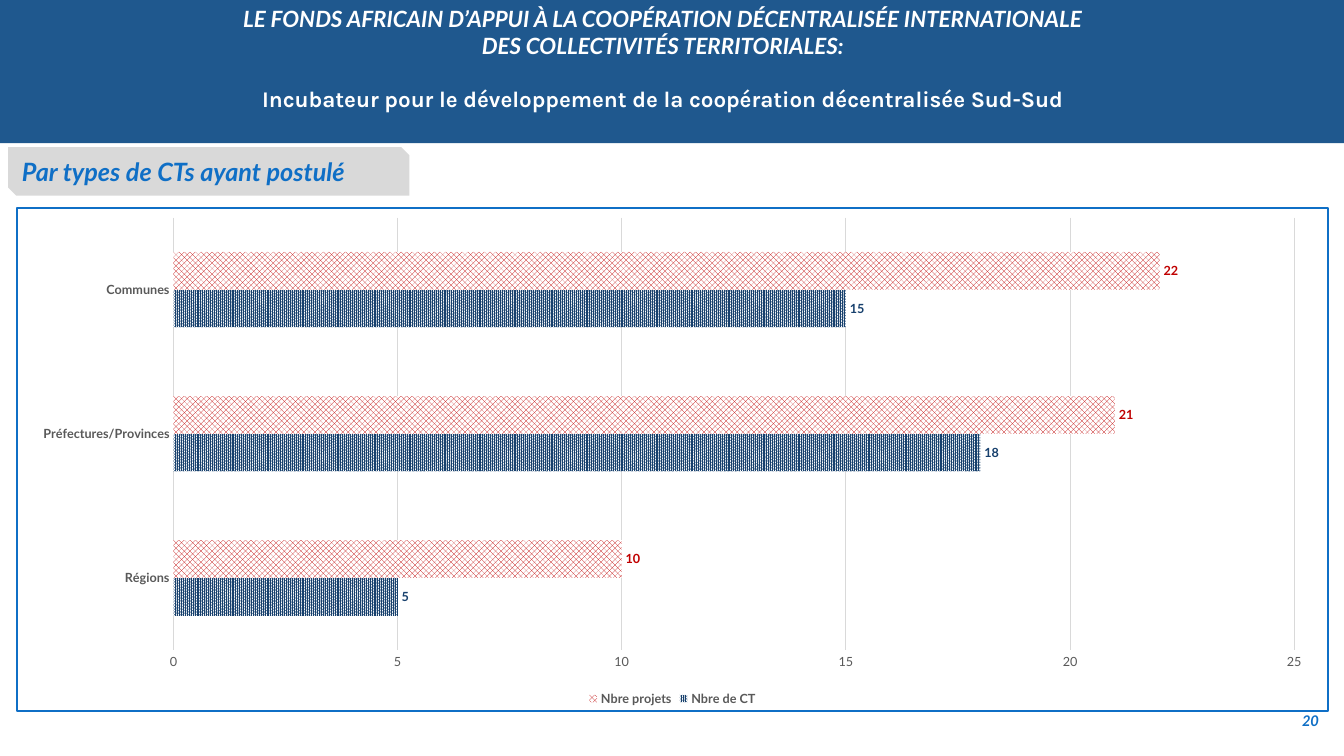
from lxml import etree
from pptx import Presentation
from pptx.chart.data import CategoryChartData
from pptx.dml.color import RGBColor
from pptx.enum.chart import XL_CHART_TYPE, XL_LABEL_POSITION, XL_LEGEND_POSITION, XL_TICK_MARK
from pptx.enum.dml import MSO_PATTERN
from pptx.enum.shapes import MSO_SHAPE
from pptx.enum.text import MSO_ANCHOR, PP_ALIGN
from pptx.oxml import parse_xml
from pptx.oxml.ns import nsdecls, qn
from pptx.util import Inches, Pt

COLORS = {"banner": "1F588E", "accent": "0F6FC6", "tag": "D9D9D9", "grid": "D9D9D9",
          "white": "FFFFFF", "axis": "595959", "navy": "17406D", "red": "C00000"}


class SlideBuilder:
    """Holds the style and the current slide, and adds elements to it."""

    def __init__(self, prs, colors):
        self.colors = colors
        self.s = prs.slides.add_slide(prs.slide_layouts[6])

    def rgb(self, name):
        return RGBColor.from_string(self.colors[name])

    def font(self, font, size, color, **extra):
        values = {"name": "Lato", "size": Pt(size), "bold": True, "italic": False, **extra}
        for key, value in values.items():
            setattr(font, key, value)
        font.color.rgb = self.rgb(color)

    def shape(self, kind, box, fill):
        sp = self.s.shapes.add_shape(kind, *map(Inches, box))
        sp.shadow.inherit = False
        sp.fill.solid()
        sp.fill.fore_color.rgb = self.rgb(fill)
        sp.line.fill.background()
        return sp

    def textbox(self, box):
        return self.s.shapes.add_textbox(*map(Inches, box))

    def text(self, sp, lines, size, color, align, **frame):
        tf = sp.text_frame
        for key, value in {"word_wrap": True, "vertical_anchor": MSO_ANCHOR.MIDDLE, **frame}.items():
            setattr(tf, key, value)
        for i, (line, before, look) in enumerate(lines):
            p = tf.add_paragraph() if i else tf.paragraphs[0]
            p.alignment = align
            p.space_before = Pt(before)
            r = p.add_run()
            r.text = line
            self.font(r.font, size, color, **look)

    def axis(self, axis, bold):
        axis.major_tick_mark = axis.minor_tick_mark = XL_TICK_MARK.NONE
        self.font(axis.tick_labels.font, 9, "axis", bold=bold)

    def line(self, line, color):
        line.color.rgb = self.rgb(color)
        line.width = Pt(0.75)

    def bar_chart(self, box, categories, series):
        data = CategoryChartData()
        data.categories = categories
        for name, values, _, _ in series:
            data.add_series(name, values)
        chart = self.s.shapes.add_chart(XL_CHART_TYPE.BAR_CLUSTERED, *map(Inches, box), data).chart
        chart.font.name, chart.font.size = "Lato", Pt(10)
        chart.has_title = False
        chart.has_legend = True
        chart.legend.position = XL_LEGEND_POSITION.BOTTOM
        chart.legend.include_in_layout = False
        self.font(chart.legend.font, 9, "axis")

        self.axis(chart.category_axis, True)
        self.line(chart.category_axis.format.line, "grid")
        value_axis = chart.value_axis
        self.axis(value_axis, False)
        for key, value in {"minimum_scale": 0, "maximum_scale": 25, "major_unit": 5}.items():
            setattr(value_axis, key, value)
        value_axis.format.line.fill.background()
        self.line(value_axis.major_gridlines.format.line, "grid")

        plot = chart.plots[0]
        for key, value in {"gap_width": 182, "overlap": 0, "vary_by_categories": False}.items():
            setattr(plot, key, value)
        for ser, (_, _, pattern, color) in zip(plot.series, series):
            fill = ser.format.fill
            fill.patterned()
            fill.pattern = pattern
            fill.fore_color.rgb = self.rgb(color)
            fill.back_color.rgb = self.rgb("white")
            labels = ser.data_labels
            labels.show_value = True
            labels.position = XL_LABEL_POSITION.OUTSIDE_END
            self.font(labels.font, 9, color)
        self.chart_border(chart, "accent", 1.5)

    def chart_border(self, chart, color, width):
        border = parse_xml(f'<c:spPr {nsdecls("c", "a")}><a:noFill/></c:spPr>')
        ln = etree.SubElement(border, qn("a:ln"), w=str(Pt(width)))
        solid = etree.SubElement(ln, qn("a:solidFill"))
        etree.SubElement(solid, qn("a:srgbClr"), val=self.colors[color])
        chart.element.find(qn("c:chart")).addnext(border)


def main():
    prs = Presentation()
    prs.slide_width, prs.slide_height = Inches(13.33), Inches(7.5)
    b = SlideBuilder(prs, COLORS)
    slanted = {"italic": True}

    b.shape(MSO_SHAPE.RECTANGLE, (0, 0, 13.33, 1.42), "banner")
    b.text(b.textbox((12.57, 6.95, 0.61, 0.4)), [("20", 0, slanted)],
           10.5, "accent", PP_ALIGN.RIGHT)
    title = [
        ("LE FONDS AFRICAIN D’APPUI À LA COOPÉRATION DÉCENTRALISÉE INTERNATIONALE", 0, slanted),
        ("DES COLLECTIVITÉS TERRITORIALES:", 0, slanted),
        ("Incubateur pour le développement de la coopération décentralisée Sud-Sud", 19,
         {"name": "Karla"}),
    ]
    b.text(b.textbox((1.34, 0.05, 10.47, 1.25)), title, 16, "white", PP_ALIGN.CENTER,
           vertical_anchor=MSO_ANCHOR.TOP, margin_top=0)
    tag = b.shape(MSO_SHAPE.SNIP_2_DIAG_RECTANGLE, (0.08, 1.46, 3.98, 0.48), "tag")
    b.text(tag, [("Par types de CTs ayant postulé", 0, slanted)], 18, "accent", PP_ALIGN.LEFT)
    b.bar_chart((0.16, 2.05, 13.02, 5.01), ["Régions", "Préfectures/Provinces", "Communes"], [
        ("Nbre de CT", (5, 18, 15), MSO_PATTERN.PERCENT_90, "navy"),
        ("Nbre projets", (10, 21, 22), MSO_PATTERN.LARGE_CHECKER_BOARD, "red"),
    ])
    prs.save("out.pptx")


if __name__ == "__main__":
    main()
